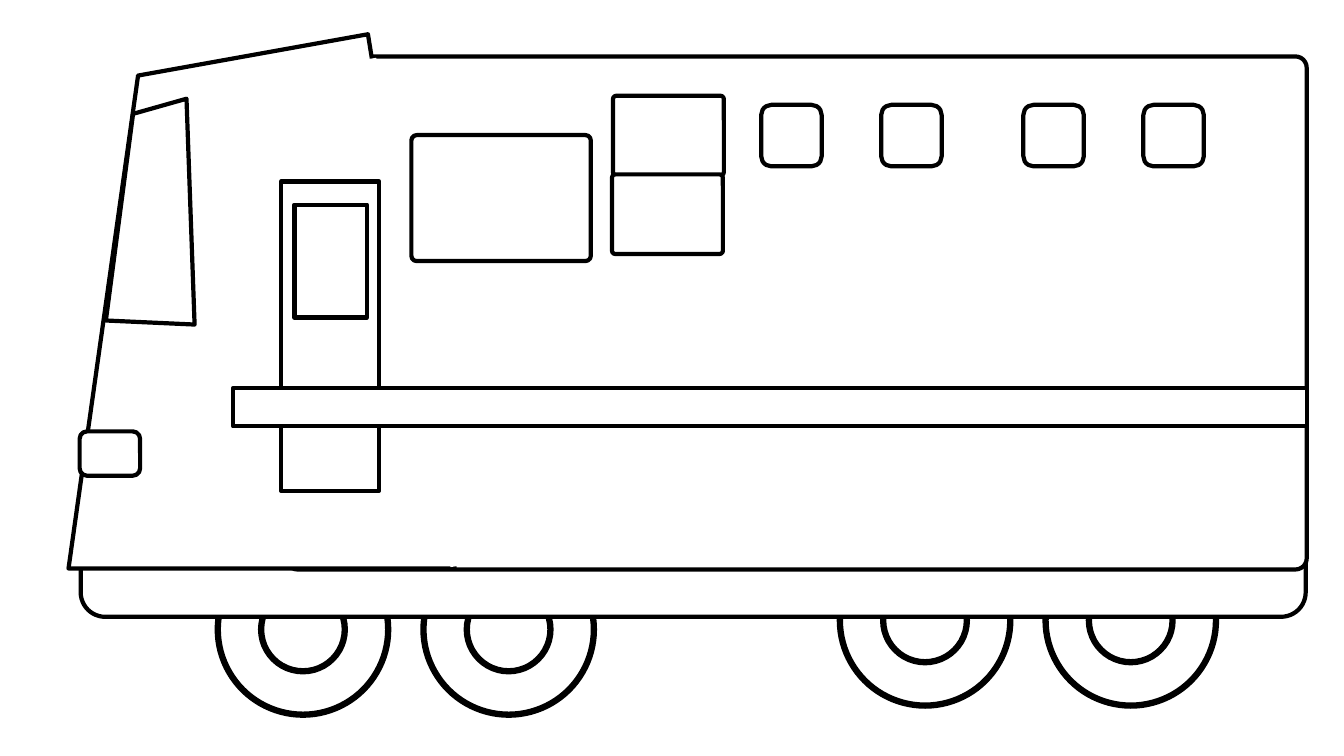
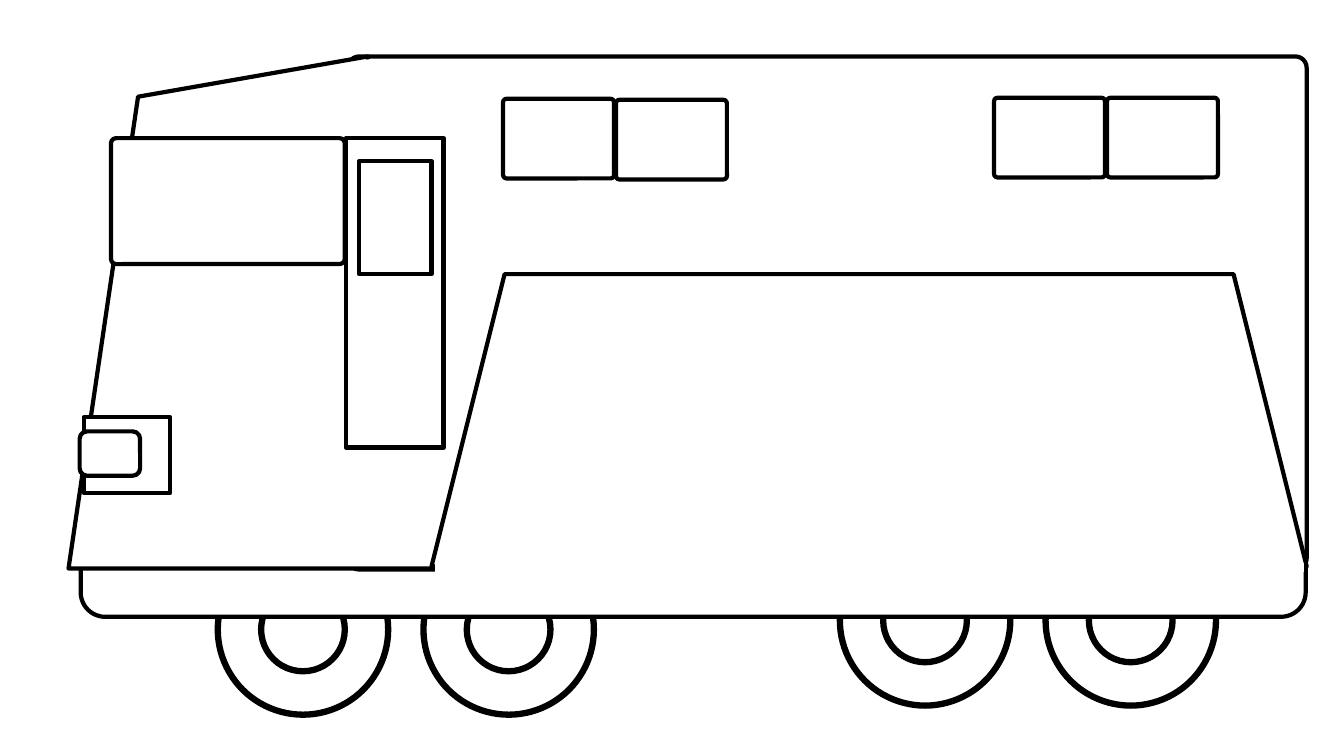
from lxml import etree
from pptx import Presentation
from pptx import util as u
from pptx.dml.color import RGBColor
from pptx.enum import shapes
from pptx.oxml.ns import qn

EMU_PER_PX = 9144  # 100 px to the inch
INK, PAPER = "000000", "FFFFFF"
OUTLINE, TYRE, ERASER = 3, 4.5, 6  # line widths in points
CAB_LEFT, CAB_RIGHT, CAB_FLOOR = 68, 451, 564
BODY_TOP, BODY_RIGHT, BODY_BOTTOM = 56, 1296, 565
ROUND = 0.042
PANE_W, PANE_H = 110, 79
WHEELS = [(216, 540), (420, 540), (833, 531), (1037, 531)]
MSO = shapes.MSO_SHAPE


def px(n):
    return u.Emu(n * EMU_PER_PX)


def rgb(color):
    return RGBColor.from_string(color)


def style(sp, fill=PAPER, width=OUTLINE):
    sp.shadow.inherit = False
    if fill:
        sp.fill.solid()
        sp.fill.fore_color.rgb = rgb(fill)
    else:
        sp.fill.background()
    sp.line.color.rgb = rgb(INK)
    sp.line.width = u.Pt(width)


def add_part(parent, kind, x, y, w, h, adj=None, **look):
    sp = parent.shapes.add_shape(kind, px(x), px(y), px(w), px(h))
    if adj is not None:
        sp.adjustments[0] = adj
    style(sp, **look)


def add_outline(s, points):
    builder = s.shapes.build_freeform(*points[0], scale=EMU_PER_PX)
    builder.add_line_segments(points[1:], close=True)
    style(builder.convert_to_shape())


def add_eraser(s, x1, y1, x2, y2):
    """White line that hides the seam between two parts."""
    ln = s.shapes.add_connector(shapes.MSO_CONNECTOR.STRAIGHT,
                                px(x1), px(y1), px(x2), px(y2))
    ln.line.color.rgb = rgb(PAPER)
    ln.line.width = u.Pt(ERASER)
    etree.SubElement(ln._element.spPr, qn("a:effectLst"))


def add_wheel(s, x, y):
    wheel = s.shapes.add_group_shape()
    for inset, size in ((0, 169), (43, 83)):
        add_part(wheel, MSO.OVAL, x + inset, y + inset, size, size,
                 fill=None, width=TYRE)


def add_undercarriage(s):
    for x, y in WHEELS:
        add_wheel(s, x, y)
    add_part(s, MSO.ROUNDED_RECTANGLE, 80, 466, 1215, 146)


def add_body(s, left):
    add_part(s, MSO.ROUNDED_RECTANGLE, left, BODY_TOP, BODY_RIGHT - left,
             BODY_BOTTOM - BODY_TOP, adj=0.022)


def add_cab(s, front_top, roof_top):
    add_outline(s, [(CAB_LEFT, CAB_FLOOR), (137, front_top),
                    (365, roof_top), (CAB_RIGHT, CAB_FLOOR)])


def add_headlight(s):
    add_part(s, MSO.ROUNDED_RECTANGLE, 79, 428, 60, 44)


def add_door(s, x, y):
    add_part(s, MSO.RECTANGLE, x, y, 97, 307)
    add_part(s, MSO.RECTANGLE, x + 13, y + 23, 72, 112)


def add_window(s, x, y, w=PANE_W, h=PANE_H):
    add_part(s, MSO.ROUNDED_RECTANGLE, x, y, w, h, adj=ROUND)


def build_striped_side(s):
    add_undercarriage(s)
    add_body(s, 284)
    add_cab(s, 75, 34)
    add_headlight(s)
    add_eraser(s, 369, 58, CAB_RIGHT, 562)
    add_outline(s, [(105, 318), (132, 113), (185, 98), (193, 322)])
    add_door(s, 279, 180)
    add_window(s, 408, 134, 178, 125)
    add_window(s, 608, 95)
    add_window(s, 607, 173)
    for x in (755, 874, 1015, 1134):
        add_part(s, MSO.ROUNDED_RECTANGLE, x, 104, 60, 61)
    add_part(s, MSO.RECTANGLE, 231, 385, 1065, 38)


def build_awning_side(s):
    add_undercarriage(s)
    add_body(s, 345)
    add_cab(s, 96, 56)
    add_part(s, MSO.RECTANGLE, 83, 414, 86, 75)
    add_headlight(s)
    add_eraser(s, 365, 59, CAB_RIGHT, 563)
    add_window(s, 110, 137, 232, 125)
    add_door(s, 343, 137)
    for x, y in ((499, 98), (611, 99), (986, 97), (1098, 97)):
        add_window(s, x, y)
    add_part(s, MSO.TRAPEZOID, 428, 272, 868, 290, adj=0.25)
    add_eraser(s, 431, 563, 1293, 563)


def main():
    prs = Presentation()
    prs.slide_width, prs.slide_height = px(1333), px(750)
    for build in (build_striped_side, build_awning_side):
        build(prs.slides.add_slide(prs.slide_layouts[6]))
    prs.save("out.pptx")


if __name__ == "__main__":
    main()
